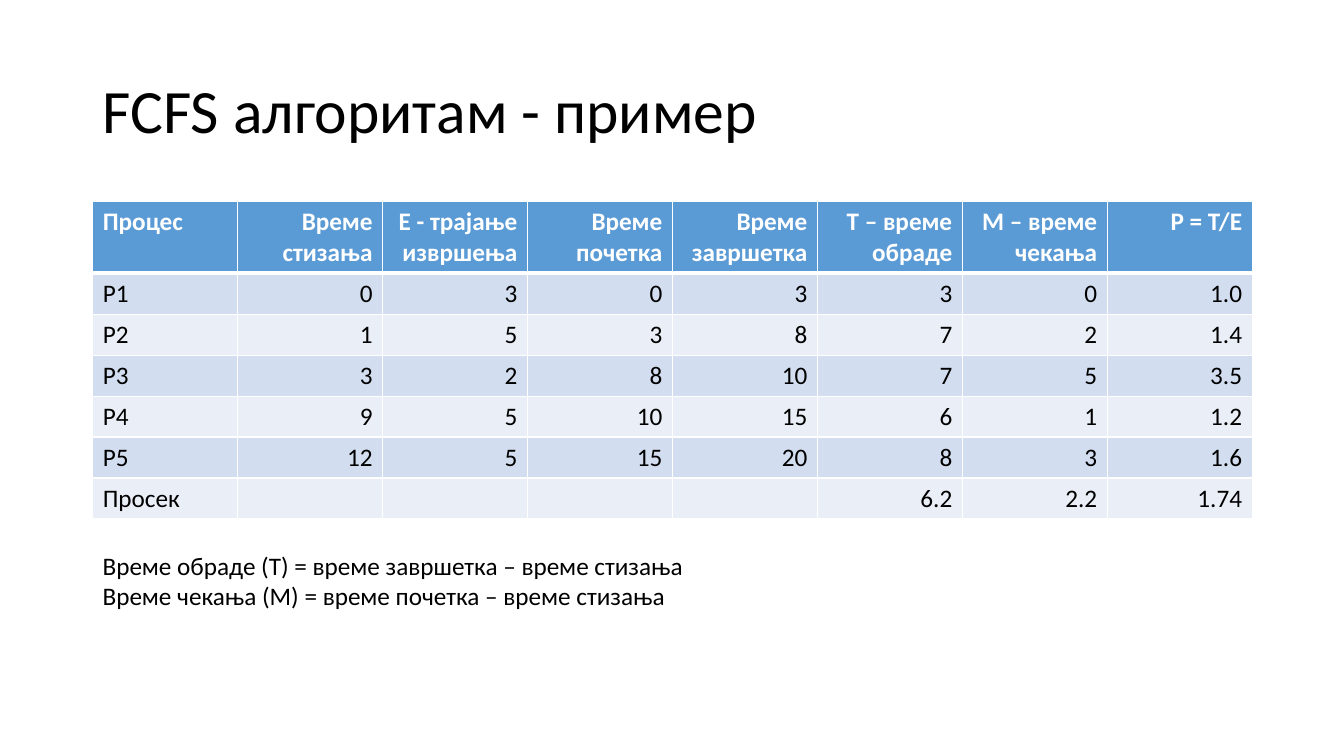
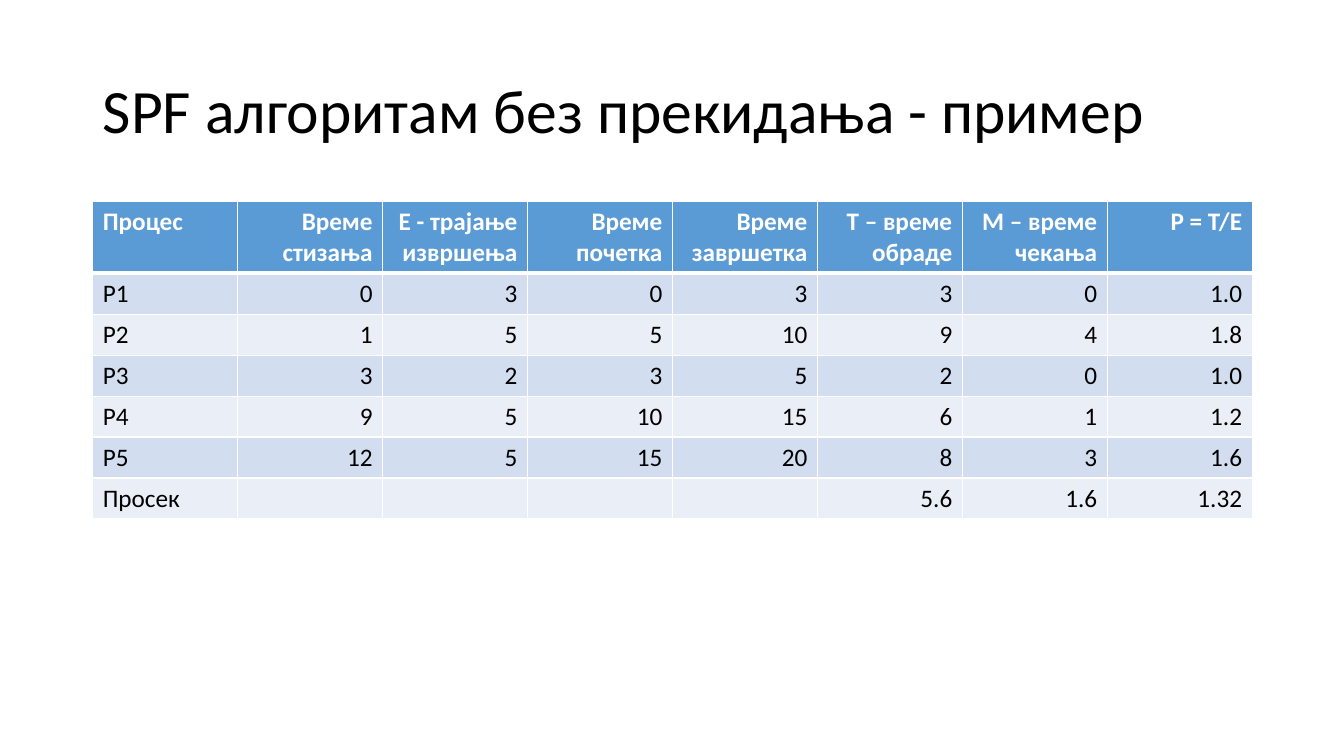
import dataclasses

import lxml.etree
import pptx
import pptx.dml.color
import pptx.enum.text
import pptx.oxml.ns
import pptx.util

Inches = pptx.util.Inches
Align = pptx.enum.text.PP_ALIGN
qn = pptx.oxml.ns.qn


@dataclasses.dataclass(frozen=True)
class Theme:
    font: str = "Calibri"
    ink: str = "000000"
    paper: str = "FFFFFF"
    head: str = "5B9BD5"
    bands: tuple = ("EAEFF7", "D2DEEF")
    title: int = 44
    text: int = 18
    thin: int = 1
    thick: int = 3


theme = Theme()


def style(frame, size, color, bold=False, align=Align.LEFT):
    for para in frame.paragraphs:
        para.alignment = align
        for run in para.runs:
            run.font.name = theme.font
            run.font.size = pptx.util.Pt(size)
            run.font.bold = bold
            run.font.color.rgb = pptx.dml.color.RGBColor.from_string(color)


def border(cell, top, bottom):
    """Draw the four cell edges; call before setting the cell's fill."""
    props = cell._tc.get_or_add_tcPr()
    edges = {"L": theme.thin, "R": theme.thin, "T": top, "B": bottom}
    for side, width in edges.items():
        line = lxml.etree.SubElement(props, qn(f"a:ln{side}"), w=str(pptx.util.Pt(width)))
        fill = lxml.etree.SubElement(line, qn("a:solidFill"))
        lxml.etree.SubElement(fill, qn("a:srgbClr"), val=theme.paper)


left, width = 0.92, 11.5
table_top, table_height, head_height = 2, 3.13, 0.69

heads = ["Процес", "Време стизања", "E - трајање извршења", "Време почетка",
         "Време завршетка", "T – време обраде", "M – време чекања", "P = T/Е"]
arrivals = [0, 1, 3, 9, 12]
bursts = [3, 5, 2, 5, 5]
pages = [
    ("FCFS алгоритам - пример", [0, 3, 8, 10, 15],
     "Време обраде (Т) = време завршетка – време стизања\n"
     "Време чекања (M) = време почетка – време стизања"),
    ("SPF алгоритам без прекидања - пример", [0, 5, 3, 10, 15], ""),
]

deck = pptx.Presentation()
deck.slide_width, deck.slide_height = Inches(13.33), Inches(7.5)

for name, starts, note in pages:
    slide = deck.slides.add_slide(deck.slide_layouts[5])
    title = slide.shapes.title
    title.left, title.top = Inches(left), Inches(0.4)
    title.width, title.height = Inches(width), Inches(1.45)
    frame = title.text_frame
    frame.text = name
    frame.auto_size = pptx.enum.text.MSO_AUTO_SIZE.NONE
    frame.vertical_anchor = pptx.enum.text.MSO_ANCHOR.MIDDLE
    frame.paragraphs[0].line_spacing = 0.9
    style(frame, theme.title, theme.ink)

    # Turnaround, wait and ratio follow from arrival, burst and start.
    rows = [heads]
    totals = [0, 0, 0]
    for num, (come, burst, start) in enumerate(zip(arrivals, bursts, starts), 1):
        end = start + burst
        turn, wait = end - come, start - come
        ratio = turn / burst
        rows.append([f"P{num}", come, burst, start, end, turn, wait, f"{ratio:.1f}"])
        totals = [total + part for total, part in zip(totals, (turn, wait, ratio))]
    turn, wait, ratio = [total / len(starts) for total in totals]
    rows.append(["Просек", "", "", "", "", f"{turn:.1f}", f"{wait:.1f}", f"{ratio:.2f}"])

    table = slide.shapes.add_table(
        len(rows), len(heads), Inches(left), Inches(table_top),
        Inches(width), Inches(table_height)).table
    for col in table.columns:
        col.width = Inches(width / len(heads))
    for r, row in enumerate(rows):
        is_head = r == 0
        body_height = (table_height - head_height) / (len(rows) - 1)
        table.rows[r].height = Inches(head_height if is_head else body_height)
        for c, value in enumerate(row):
            cell = table.cell(r, c)
            cell.text_frame.text = str(value)
            style(cell.text_frame, theme.text, theme.paper if is_head else theme.ink,
                  is_head, Align.RIGHT if c else Align.LEFT)
            border(cell, theme.thick if r == 1 else theme.thin,
                   theme.thick if is_head else theme.thin)
            cell.fill.solid()
            cell.fill.fore_color.rgb = pptx.dml.color.RGBColor.from_string(
                theme.head if is_head else theme.bands[r % 2])

    if note:
        box = slide.shapes.add_textbox(Inches(left), Inches(5.41), Inches(6.03), Inches(1.01))
        box.text_frame.text = note
        box.text_frame.word_wrap = False
        style(box.text_frame, theme.text, theme.ink)

deck.save("out.pptx")
